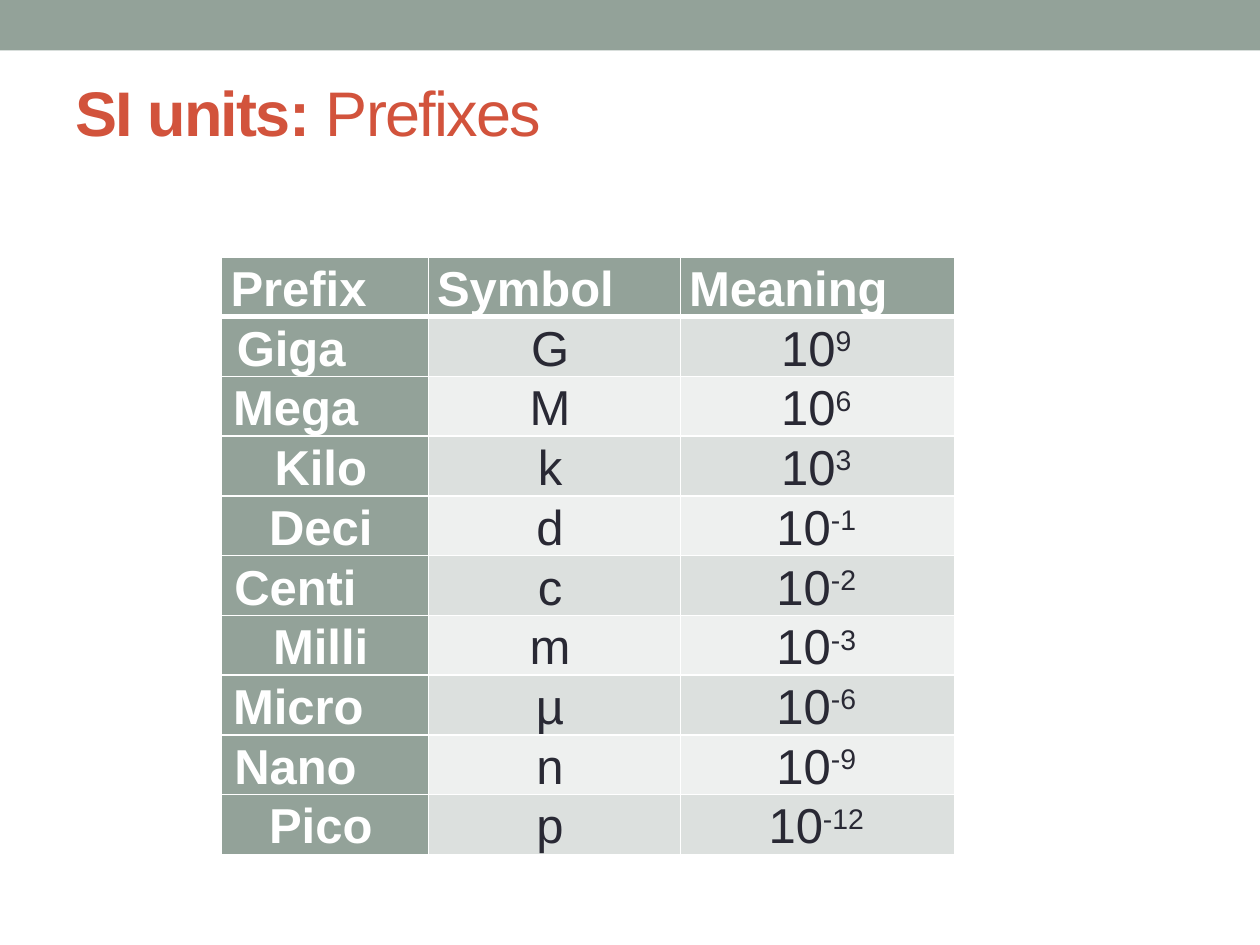
from dataclasses import dataclass

from lxml.etree import SubElement
from pptx import Presentation
from pptx.dml.color import RGBColor
from pptx.enum.shapes import MSO_SHAPE as Shape
from pptx.enum.text import MSO_ANCHOR as Anchor, PP_ALIGN as Align
from pptx.oxml.ns import qn
from pptx.util import Inches, Pt


@dataclass(frozen=True)
class Theme:
    font: str = "Arial"
    sage: str = "93A299"
    accent: str = "D2533C"
    ink: str = "292934"
    white: str = "FFFFFF"
    bands: tuple = ("DCE0DE", "EEF0EF")
    title_size: int = 36
    table_size: int = 28


@dataclass(frozen=True)
class Prefix:
    name: str
    symbol: str
    exponent: int
    indent: float | None = None


@dataclass(frozen=True)
class CellStyle:
    fill: str
    color: str
    bold: bool = False
    align: Align = Align.CENTER
    indent: float = 0
    bottom: int = 1


THEME = Theme()
HEADERS = (("Prefix", Align.LEFT), ("Symbol ", Align.JUSTIFY), ("Meaning", Align.LEFT))
COLUMN_WIDTHS = (1.64, 2, 2.18)
ROW_HEIGHT = 0.47
PREFIXES = (
    Prefix("Giga", "G ", 9, 0.05),
    Prefix("Mega", "M ", 6, 0.02),
    Prefix("Kilo ", "k ", 3),
    Prefix("Deci ", "d ", -1),
    Prefix("Centi", "c ", -2, 0.03),
    Prefix("Milli ", "m ", -3),
    Prefix("Micro", "µ ", -6, 0.02),
    Prefix("Nano", "n ", -9, 0.03),
    Prefix("Pico ", "p ", -12),
)


def rgb(value: str) -> RGBColor:
    return RGBColor.from_string(value)


def set_font(font, size: int, color: str) -> None:
    font.name = THEME.font
    font.size = Pt(size)
    font.color.rgb = rgb(color)


def add_band(s) -> None:
    sp = s.shapes.add_shape(Shape.RECTANGLE, 0, 0, Inches(10), Inches(0.4))
    sp.shadow.inherit = False
    sp.fill.solid()
    sp.fill.fore_color.rgb = rgb(THEME.sage)
    sp.line.fill.background()


def add_title(s) -> None:
    sp = s.shapes.title
    sp.left, sp.top, sp.width, sp.height = map(Inches, (0.5, 0.58, 9, 1.08))
    tf = sp.text_frame
    tf.word_wrap = True
    tf.vertical_anchor = Anchor.TOP
    tf.margin_top = 0
    p = tf.paragraphs[0]
    p.alignment = Align.LEFT
    set_font(p.font, THEME.title_size, THEME.accent)
    for text, bold in (("SI units: ", True), ("Prefixes", False)):
        r = p.add_run()
        r.text = text
        r.font.bold = bold
        r.font._element.set("spc", "-100")


def set_borders(cell, bottom: int) -> None:
    props = cell._tc.get_or_add_tcPr()
    for i, (side, width) in enumerate((("L", 1), ("R", 1), ("T", 1), ("B", bottom))):
        line = props.makeelement(qn(f"a:ln{side}"), {"w": str(Pt(width))})
        fill = SubElement(line, qn("a:solidFill"))
        SubElement(fill, qn("a:srgbClr"), val=THEME.white)
        props.insert(i, line)


def fill_cell(cell, text: str, style: CellStyle, exponent: str = "") -> None:
    cell.fill.solid()
    cell.fill.fore_color.rgb = rgb(style.fill)
    cell.margin_left, cell.margin_top = Inches(0.07), Inches(0.01)
    cell.margin_right, cell.margin_bottom = Inches(0.03), 0
    set_borders(cell, style.bottom)
    p = cell.text_frame.paragraphs[0]
    p.alignment = style.align
    p.line_spacing = 1.07
    set_font(p.font, THEME.table_size, style.color)
    p.font.bold = style.bold
    if style.indent:
        props = p._p.get_or_add_pPr()
        props.set("marL", str(Inches(style.indent)))
        props.set("indent", "0")
    p.add_run().text = text
    if exponent:
        r = p.add_run()
        r.text = exponent
        r.font._element.set("baseline", "30000")


def add_prefix_table(s) -> None:
    rows = len(PREFIXES) + 1
    table = s.shapes.add_table(
        rows, len(HEADERS), Inches(1.76), Inches(2.04),
        Inches(sum(COLUMN_WIDTHS)), Inches(rows * ROW_HEIGHT),
    ).table
    for column, width in zip(table.columns, COLUMN_WIDTHS):
        column.width = Inches(width)
    for row in table.rows:
        row.height = Inches(ROW_HEIGHT)
    for col, (text, align) in enumerate(HEADERS):
        style = CellStyle(THEME.sage, THEME.white, True, align, bottom=3)
        fill_cell(table.cell(0, col), text, style)
    for row, prefix in enumerate(PREFIXES, 1):
        align = Align.CENTER if prefix.indent is None else Align.LEFT
        name = CellStyle(THEME.sage, THEME.white, True, align, prefix.indent or 0)
        body = CellStyle(THEME.bands[(row - 1) % 2], THEME.ink)
        fill_cell(table.cell(row, 0), prefix.name, name)
        fill_cell(table.cell(row, 1), prefix.symbol, body)
        fill_cell(table.cell(row, 2), "10", body, f"{prefix.exponent} ")


def main() -> None:
    prs = Presentation()
    prs.slide_width, prs.slide_height = Inches(10), Inches(7.5)
    s = prs.slides.add_slide(prs.slide_layouts[5])
    add_band(s)
    add_title(s)
    add_prefix_table(s)
    prs.save("out.pptx")


if __name__ == "__main__":
    main()
